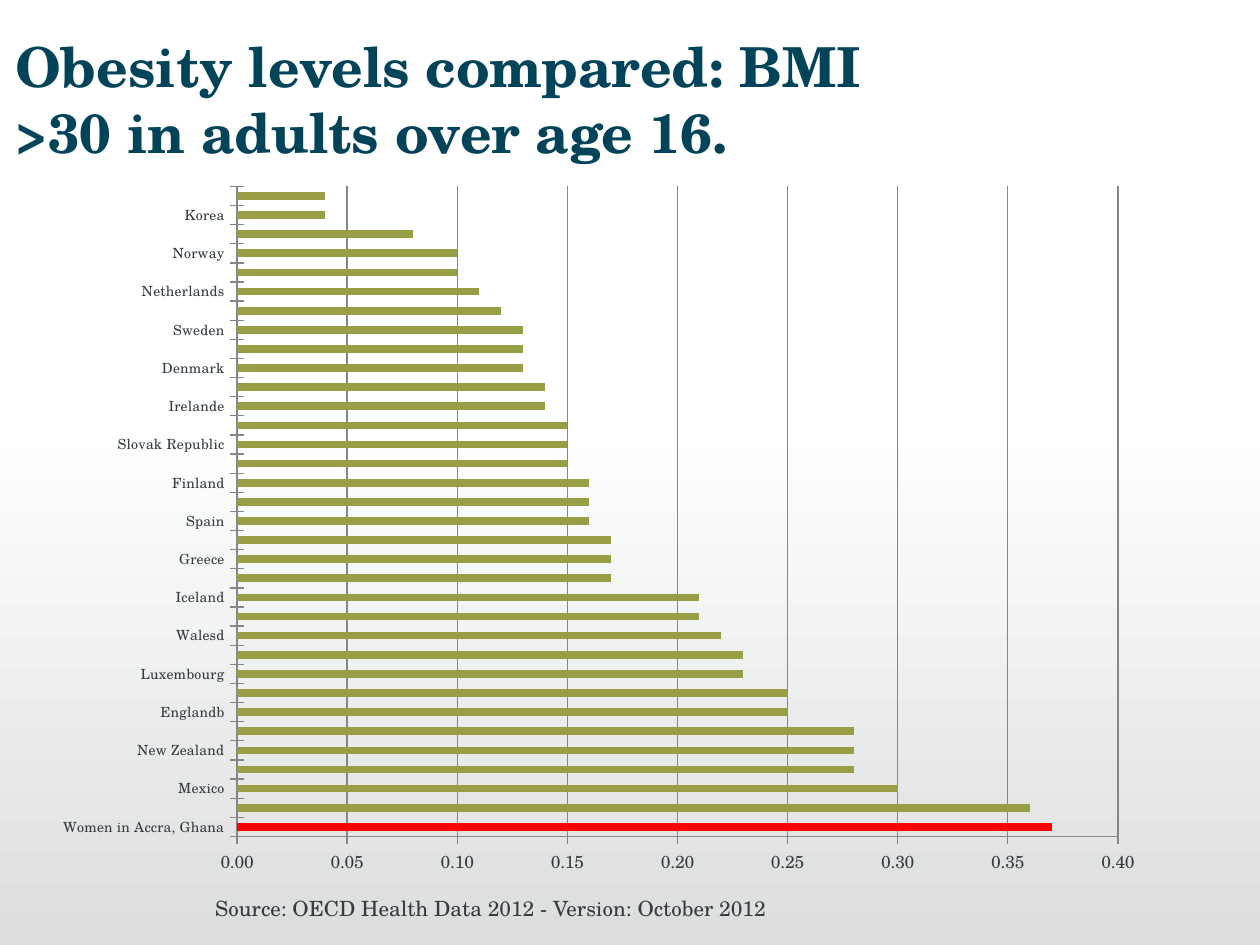
from dataclasses import dataclass

import pptx
import pptx.chart.data
import pptx.dml.color
import pptx.enum.chart
import pptx.enum.shapes
import pptx.oxml
import pptx.oxml.ns
import pptx.util

Pt = pptx.util.Pt
RGB = pptx.dml.color.RGBColor

FONT = "TeX Gyre Schola"
WHITE = RGB(0xFF, 0xFF, 0xFF)
MIST = RGB(0xDC, 0xDE, 0xDE)
TEAL = RGB(0x01, 0x43, 0x59)
SLATE = RGB(0x32, 0x3D, 0x43)
GREY = RGB(0x86, 0x86, 0x86)
OLIVE = RGB(0x97, 0x9E, 0x45)
RED = RGB(0xFF, 0, 0)

RATES = [
    ("Women in Accra, Ghana", 0.37), ("United States", 0.36),
    ("Mexico", 0.3), ("Hungary", 0.28), ("New Zealand", 0.28),
    ("Scotlanda", 0.28), ("Englandb", 0.25), ("Australia", 0.25),
    ("Luxembourg", 0.23), ("Northern Irelandc", 0.23), ("Walesd", 0.22),
    ("Czech Republic", 0.21), ("Iceland", 0.21), ("Canada", 0.17),
    ("Greece", 0.17), ("Turkey", 0.17), ("Spain", 0.16), ("Poland", 0.16),
    ("Finland", 0.16), ("Portugal", 0.15), ("Slovak Republic", 0.15),
    ("Germany", 0.15), ("Irelande", 0.14), ("Belgium", 0.14),
    ("Denmark", 0.13), ("France", 0.13), ("Sweden", 0.13),
    ("Austria", 0.12), ("Netherlands", 0.11), ("Italy", 0.1),
    ("Norway", 0.1), ("Switzerland", 0.08), ("Korea", 0.04), ("Japan", 0.04),
]


@dataclass
class Box:
    left: float
    top: float
    width: float
    height: float

    def frame(self) -> list:
        return [Pt(v) for v in (self.left, self.top, self.width, self.height)]


@dataclass
class Label:
    box: Box
    text: str
    size: float
    color: RGB
    bold: bool = False
    inset: float = 7.2


LABELS = [
    Label(Box(8.64, 15.12, 510.48, 73.44),
          "Obesity levels compared: BMI >30 in adults over age 16.",
          31.5, TEAL, True, 0),
    Label(Box(115.92, 508.32, 459.36, 21.6),
          "Source: OECD Health Data 2012 - Version: October 2012", 12, SLATE),
]


def style(font, size: float, color: RGB, bold: bool = False) -> None:
    font.name, font.size, font.bold = FONT, Pt(size), bold
    font.color.rgb = color


def add_label(slide, label: Label) -> None:
    frame = slide.shapes.add_textbox(*label.box.frame()).text_frame
    frame.word_wrap = True
    frame.margin_left = Pt(label.inset)
    para = frame.paragraphs[0]
    para.text = label.text
    style(para.font, label.size, label.color, label.bold)


def add_shade(slide, box: Box) -> None:
    kind = pptx.enum.shapes.MSO_SHAPE.RECTANGLE
    shade = slide.shapes.add_shape(kind, *box.frame())
    shade.shadow.inherit = False
    shade.line.fill.background()
    shade.fill.gradient()
    shade.fill.gradient_angle = 270
    for stop, color, place in zip(shade.fill.gradient_stops, (WHITE, MIST), (0, 1)):
        stop.color.rgb = color
        stop.position = place


def set_plot(chart, x: float, y: float, w: float, h: float) -> None:
    """Fix the inner plot area, in fractions of the chart."""
    area = chart._chartSpace.chart.plotArea
    for old in area.findall(pptx.oxml.ns.qn("c:layout")):
        area.remove(old)
    parts = "".join(f'<c:{k} val="{v}"/>' for k, v in (
        ("layoutTarget", "inner"), ("xMode", "edge"), ("yMode", "edge"),
        ("x", x), ("y", y), ("w", w), ("h", h)))
    area.insert(0, pptx.oxml.parse_xml(
        f'<c:layout {pptx.oxml.ns.nsdecls("c")}>'
        f'<c:manualLayout>{parts}</c:manualLayout></c:layout>'))


def skip_names(axis, step: int) -> None:
    """Show only every step-th category name."""
    last = axis._element.find(pptx.oxml.ns.qn("c:noMultiLvlLbl"))
    last.addprevious(pptx.oxml.parse_xml(
        f'<c:tickLblSkip {pptx.oxml.ns.nsdecls("c")} val="{step}"/>'))


def add_bars(slide, box: Box) -> None:
    enum = pptx.enum.chart
    data = pptx.chart.data.CategoryChartData(number_format="0.00")
    data.categories = [name for name, _ in RATES]
    data.add_series("Series 1", [rate for _, rate in RATES])
    chart = slide.shapes.add_chart(
        enum.XL_CHART_TYPE.BAR_CLUSTERED, *box.frame(), data).chart
    chart.has_legend = False
    chart.has_title = False
    style(chart.font, 10, SLATE)
    set_plot(chart, 0.15, 0.03, 0.78, 0.91)

    plot = chart.plots[0]
    plot.vary_by_categories = False
    plot.gap_width, plot.overlap = 150, 90
    bars = plot.series[0]
    bars.invert_if_negative = False
    for part, color in ((bars, OLIVE), (bars.points[0], RED)):
        part.format.fill.solid()
        part.format.fill.fore_color.rgb = color

    names, rates = chart.category_axis, chart.value_axis
    for axis, size in ((names, 8), (rates, 10)):
        axis.major_tick_mark = enum.XL_TICK_MARK.CROSS
        axis.minor_tick_mark = enum.XL_TICK_MARK.NONE
        axis.format.line.color.rgb = GREY
        style(axis.tick_labels.font, size, SLATE)
    skip_names(names, 2)
    rates.minimum_scale, rates.maximum_scale, rates.major_unit = 0, 0.4, 0.05
    rates.tick_labels.number_format = "0.00"
    rates.tick_labels.number_format_is_linked = False
    rates.has_major_gridlines = True
    rates.major_gridlines.format.line.color.rgb = GREY


def main() -> None:
    deck = pptx.Presentation()
    deck.slide_width, deck.slide_height = Pt(720), Pt(540)
    slide = deck.slides.add_slide(deck.slide_layouts[6])
    add_shade(slide, Box(-6.48, 239.76, 726.48, 300.24))
    add_bars(slide, Box(36, 94.32, 648, 408.24))
    for label in LABELS:
        add_label(slide, label)
    deck.save("out.pptx")


if __name__ == "__main__":
    main()
